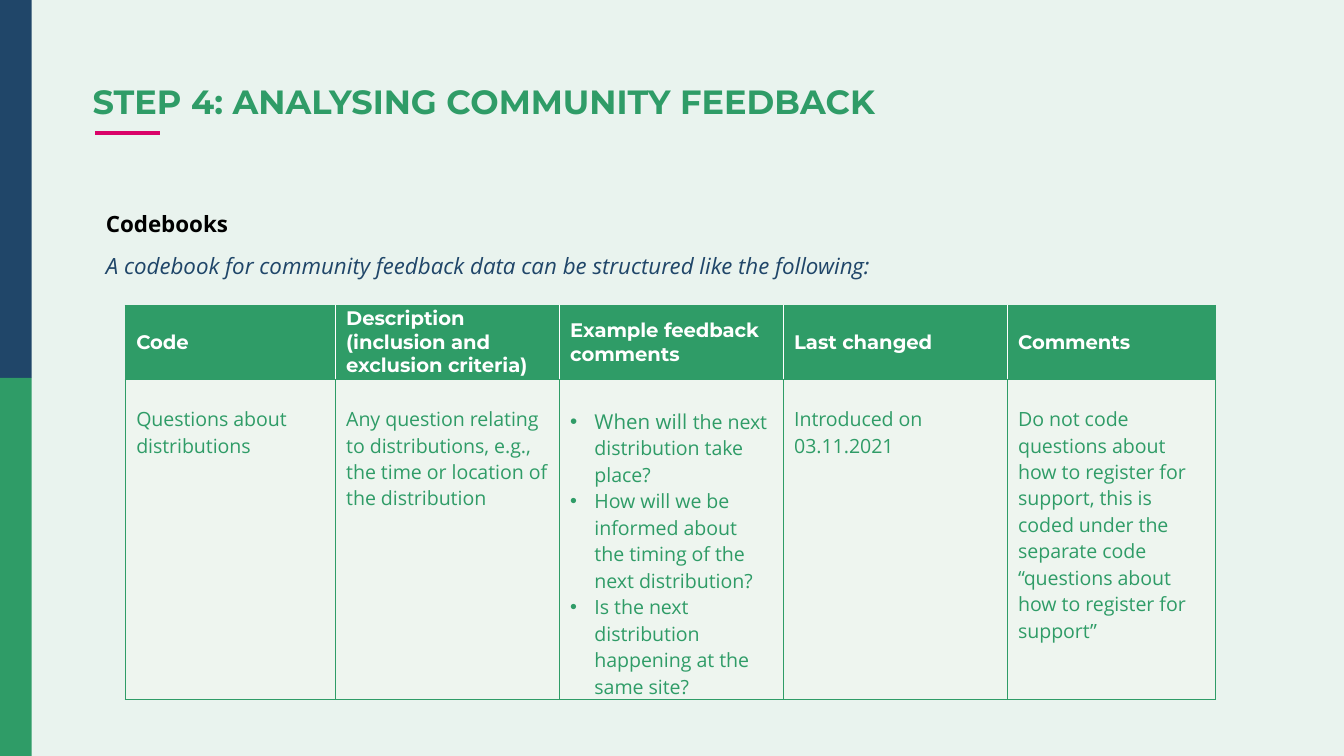
from lxml import etree
from pptx import Presentation
from pptx.dml.color import RGBColor
from pptx.enum.shapes import MSO_CONNECTOR, MSO_SHAPE
from pptx.enum.text import MSO_ANCHOR
from pptx.oxml.ns import qn
from pptx.util import Pt

STRAIGHT = MSO_CONNECTOR.STRAIGHT
RECTANGLE = MSO_SHAPE.RECTANGLE
MIDDLE, TOP = MSO_ANCHOR.MIDDLE, MSO_ANCHOR.TOP

GREEN, NAVY, PINK = "2F9C67", "204669", "D90368"
WHITE, BLACK = "FFFFFF", "000000"
PAGE_FILL, CELL_FILL = "E9F3EE", "EEF5EF"
HEADING_FONT, BODY_FONT = "Montserrat", "Open Sans"

PAGE_WIDTH, PAGE_HEIGHT = 720, 405
COLUMN_WIDTHS = [112.5, 120, 120, 120, 111.5]
ROW_HEIGHTS = [39.6, 171.5]
HEADERS = [
    "Code",
    "Description (inclusion and exclusion criteria)",
    "Example feedback comments",
    "Last changed",
    "Comments",
]
ENTRIES = [
    "Questions about distributions",
    "Any question relating to distributions, e.g., the time or location of the distribution",
    [
        [("When will ", 11), ("the next distribution take place?", 10.5)],
        [("How will we be informed about the timing of the next distribution?", 10.5)],
        [("Is the next distribution happening at the same site?", 10.5)],
    ],
    "Introduced on 03.11.2021",
    "Do not code questions about how to register for support, this is coded under "
    "the separate code “questions about how to register for support”",
]


def color(value):
    return RGBColor.from_string(value)


def add_text(para, text, size=10.5, font=BODY_FONT, fill=GREEN, bold=False, italic=False):
    span = para.add_run()
    span.text = text
    span.font.size = Pt(size)
    span.font.name = font
    span.font.color.rgb = color(fill)
    span.font.bold = bold
    span.font.italic = italic


def add_text_box(page, left, top, width, height, inset_left):
    frame = page.shapes.add_textbox(Pt(left), Pt(top), Pt(width), Pt(height)).text_frame
    frame.word_wrap = True
    frame.margin_left = Pt(inset_left)
    return frame


def add_side_band(page, left, top, width, height):
    half = height / 2
    for index, fill in enumerate([NAVY, GREEN]):
        band = page.shapes.add_shape(
            RECTANGLE, Pt(left), Pt(top + index * half), Pt(width), Pt(half))
        band.shadow.inherit = False
        band.fill.solid()
        band.fill.fore_color.rgb = color(fill)
        band.line.fill.background()


def add_title(page, left, top, width, height):
    """Place the heading with its short accent rule below."""
    rule_top = top + height + 2
    rule = page.shapes.add_connector(
        STRAIGHT, Pt(left + 1.4), Pt(rule_top), Pt(left + 36.4), Pt(rule_top))
    rule.line.color.rgb = color(PINK)
    rule.line.width = Pt(2.25)
    etree.SubElement(rule.element.spPr, qn("a:effectLst"))

    para = add_text_box(page, left, top, width, height, inset_left=0).paragraphs[0]
    para.line_spacing = 0.9
    add_text(para, "STEP 4: ANALYSING COMMUNITY FEEDBACK", size=18,
             font=HEADING_FONT, bold=True)


def add_introduction(page, left, top, width, height):
    frame = add_text_box(page, left, top, width, height, inset_left=7.2)
    heading, sentence = frame.paragraphs[0], frame.add_paragraph()
    heading.line_spacing = sentence.line_spacing = Pt(15.4)
    sentence.space_before = Pt(7.5)
    add_text(heading, "Codebooks", size=12, fill=BLACK, bold=True)
    add_text(sentence, "A codebook for community feedback data can be structured like the following:",
             size=12, fill=NAVY, italic=True)


def set_borders(cell, left=GREEN, right=GREEN):
    properties = cell._tc.get_or_add_tcPr()
    sides = {"lnL": left, "lnR": right, "lnT": GREEN, "lnB": GREEN}
    for side, value in sides.items():
        line = etree.SubElement(properties, qn(f"a:{side}"), w=str(Pt(0.5)))
        fill = etree.SubElement(line, qn("a:solidFill"))
        etree.SubElement(fill, qn("a:srgbClr"), val=value)


def format_cell(cell, fill, anchor, margin_top=0):
    cell.margin_left = cell.margin_right = Pt(6)
    cell.margin_top, cell.margin_bottom = Pt(margin_top), Pt(0)
    cell.vertical_anchor = anchor
    cell.fill.solid()
    cell.fill.fore_color.rgb = color(fill)


def add_bullet(para, indent=13):
    properties = para._p.get_or_add_pPr()
    properties.set("marL", str(Pt(indent)))
    properties.set("indent", str(-Pt(indent)))
    etree.SubElement(properties, qn("a:buFont"), typeface="Arial")
    etree.SubElement(properties, qn("a:buChar"), char="•")


def fill_bullet_cell(cell, items):
    frame = cell.text_frame
    for index, item in enumerate(items):
        para = frame.add_paragraph() if index else frame.paragraphs[0]
        add_bullet(para)
        for text, size in item:
            add_text(para, text, size=size)


def add_codebook_table(page, left, top):
    table = page.shapes.add_table(
        len(ROW_HEIGHTS), len(COLUMN_WIDTHS), Pt(left), Pt(top),
        Pt(sum(COLUMN_WIDTHS)), Pt(sum(ROW_HEIGHTS))).table
    table.horz_banding = False
    for row, height in zip(table.rows, ROW_HEIGHTS):
        row.height = Pt(height)
    for column, width in zip(table.columns, COLUMN_WIDTHS):
        column.width = Pt(width)

    last = len(HEADERS) - 1
    for index, (header, entry) in enumerate(zip(HEADERS, ENTRIES)):
        cell = table.cell(0, index)
        set_borders(cell, left=WHITE if index else GREEN,
                    right=WHITE if index < last else GREEN)
        format_cell(cell, GREEN, MIDDLE)
        add_text(cell.text_frame.paragraphs[0], header, font=HEADING_FONT,
                 fill=WHITE, bold=True)

        cell = table.cell(1, index)
        set_borders(cell)
        if isinstance(entry, list):
            format_cell(cell, CELL_FILL, TOP, margin_top=15)
            fill_bullet_cell(cell, entry)
        else:
            format_cell(cell, CELL_FILL, TOP, margin_top=14.3)
            add_text(cell.text_frame.paragraphs[0], entry)


def main():
    deck = Presentation()
    deck.slide_width, deck.slide_height = Pt(PAGE_WIDTH), Pt(PAGE_HEIGHT)
    page = deck.slides.add_slide(deck.slide_layouts[6])
    page.background.fill.solid()
    page.background.fill.fore_color.rgb = color(PAGE_FILL)

    add_side_band(page, 0, 0, 17, PAGE_HEIGHT)
    add_title(page, 49.6, 42.5, 620.6, 26.8)
    add_introduction(page, 49.6, 107.8, 620.6, 50)
    add_codebook_table(page, 67, 163.5)
    deck.save("out.pptx")


if __name__ == "__main__":
    main()
